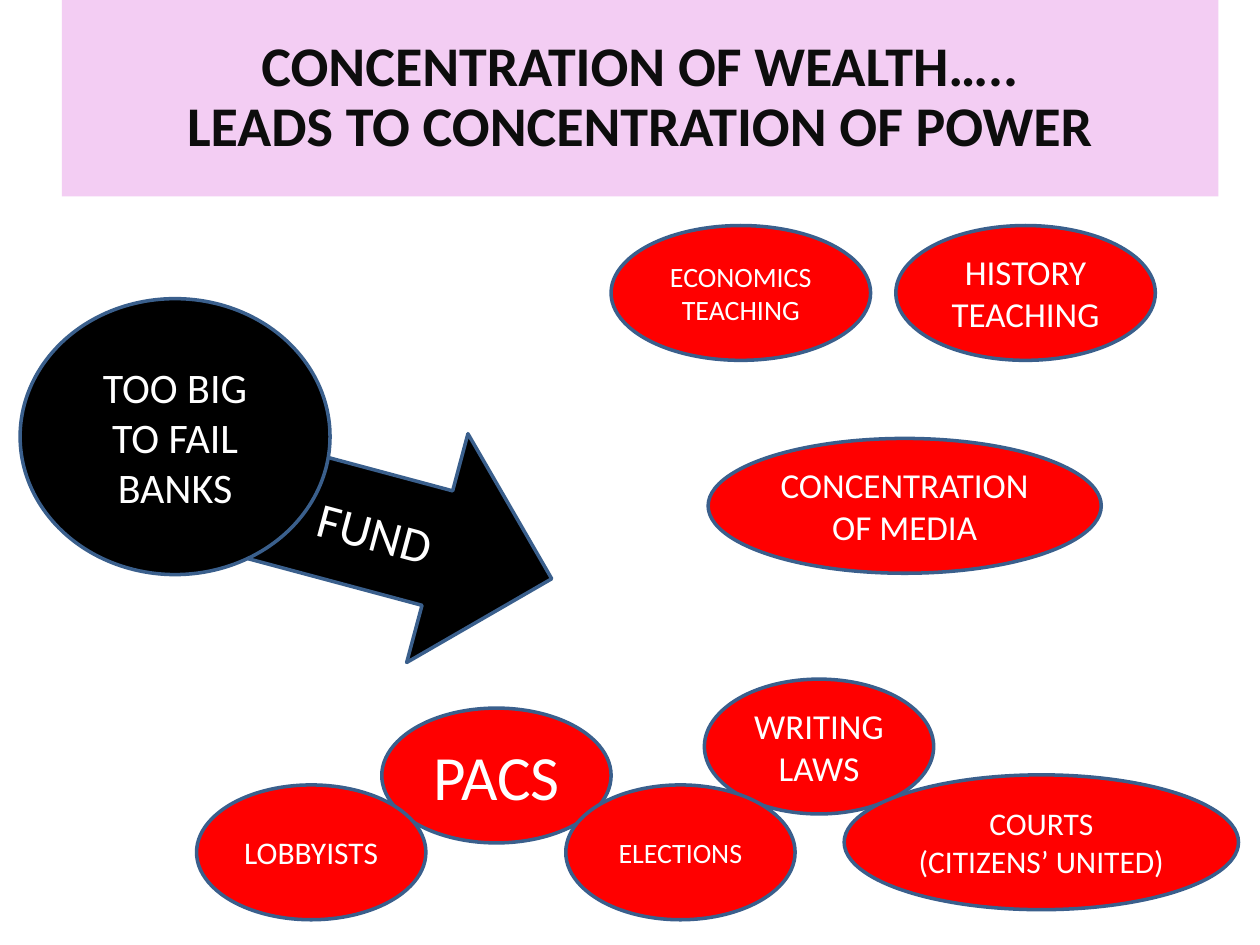
from pptx import Presentation
from pptx.dml.color import RGBColor
from pptx.enum.shapes import MSO_SHAPE
from pptx.enum.text import MSO_ANCHOR, PP_ALIGN
from pptx.util import Inches, Pt

OVAL, RECT, ARROW = MSO_SHAPE.OVAL, MSO_SHAPE.RECTANGLE, MSO_SHAPE.RIGHT_ARROW
MIDDLE, CENTER = MSO_ANCHOR.MIDDLE, PP_ALIGN.CENTER

BLACK = RGBColor(0x00, 0x00, 0x00)
WHITE = RGBColor(0xFF, 0xFF, 0xFF)
RED = RGBColor(0xFF, 0x00, 0x00)
BLUE = RGBColor(0x3A, 0x5F, 0x8C)
PINK = RGBColor(0xF3, 0xCD, 0xF3)
INK = RGBColor(0x0D, 0x0D, 0x0D)

# Content
TITLE = "CONCENTRATION OF WEALTH…..\nLEADS TO CONCENTRATION OF POWER"
BANKS = "TOO BIG\nTO FAIL BANKS"

# Oval sizes in inches: one height, four widths
HIGH = 1.07
SMALL, MID, LARGE, WIDE = 1.82, 2.06, 3.12, 3.13

# Rows of the oval grid (top edges)
TEACH, MEDIA, LAWS, PACS, COURTS, BASE = 1.79, 3.48, 5.39, 5.62, 6.15, 6.23

# Spheres of power, back to front: text, left, row, width, text size
POWERS = [
    ("WRITING LAWS", 5.59, LAWS, SMALL, 20),
    ("PACS", 3.03, PACS, SMALL, 36),
    ("CONCENTRATION OF MEDIA", 5.62, MEDIA, LARGE, 20),
    ("LOBBYISTS", 1.56, BASE, SMALL, 18),
    ("ECONOMICS\nTEACHING", 4.85, TEACH, MID, 16),
    ("ELECTIONS", 4.49, BASE, SMALL, 16),
    ("HISTORY\nTEACHING", 7.11, TEACH, MID, 20),
    ("COURTS\n(CITIZENS’ UNITED)", 6.7, COURTS, WIDE, 18),
]

deck = Presentation()
deck.slide_width, deck.slide_height = Inches(10), Inches(7.5)
slide = deck.slides.add_slide(deck.slide_layouts[6])


def add(kind, text, box, fill, size, ink=WHITE, edge=BLUE):
    """Add a filled shape with centred text."""
    shape = slide.shapes.add_shape(kind, *(Inches(n) for n in box))
    shape.shadow.inherit = False
    shape.fill.solid()
    shape.fill.fore_color.rgb = fill
    if edge is None:
        shape.line.fill.background()
    else:
        shape.line.color.rgb = edge
        shape.line.width = Pt(2)
    frame = shape.text_frame
    frame.text = text
    frame.word_wrap = True
    frame.vertical_anchor = MIDDLE
    for para in frame.paragraphs:
        para.alignment = CENTER
        for run in para.runs:
            run.font.name = "Calibri"
            run.font.size = Pt(size)
            run.font.color.rgb = ink
    return shape


# Banks and the arrow that comes out from behind them
arrow = add(ARROW, "FUND", (2, 3.34, 2.42, 1.88), BLACK, 28)
arrow.rotation = 15
add(OVAL, BANKS, (0.16, 2.37, 2.46, 2.19), BLACK, 24)

# Title band
band = add(RECT, TITLE, (0.49, 0, 9.18, 1.56), PINK, 32, INK, None)
for para in band.text_frame.paragraphs:
    para.line_spacing = 0.9
    para.runs[0].font.bold = True

# Red ovals
for text, left, top, width, size in POWERS:
    add(OVAL, text, (left, top, width, HIGH), RED, size)

deck.save("out.pptx")
